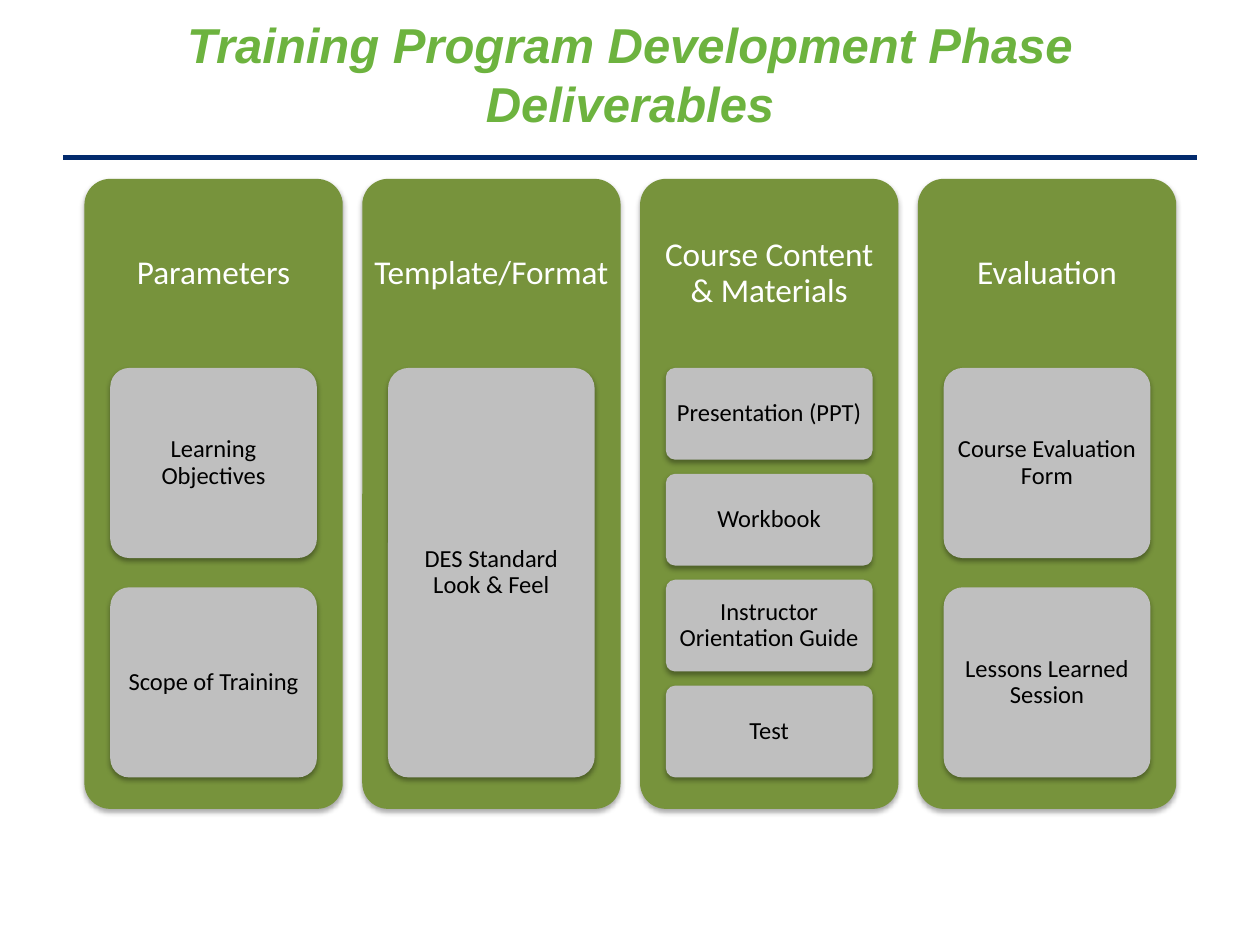
from lxml import etree
from pptx import Presentation
from pptx.dml.color import RGBColor
from pptx.enum.shapes import MSO_CONNECTOR, MSO_SHAPE
from pptx.enum.text import MSO_ANCHOR, PP_ALIGN
from pptx.oxml import parse_xml
from pptx.oxml.ns import nsdecls, qn
from pptx.util import Inches, Pt


def color(hex_string):
    return RGBColor.from_string(hex_string)


def add_box(left, top, width, height, fill, text, size, text_color, insets):
    """Add a shadowed rounded rectangle; insets run left, top, right, bottom."""
    shape = slide.shapes.add_shape(
        MSO_SHAPE.ROUNDED_RECTANGLE,
        Inches(left), Inches(top), Inches(width), Inches(height))
    shape.adjustments[0] = 0.1
    shape.fill.solid()
    shape.fill.fore_color.rgb = color(fill)
    shape.line.fill.background()
    shape.shadow.inherit = False
    effects = shape.element.spPr.find(qn("a:effectLst"))
    effects.append(parse_xml(
        f'<a:outerShdw {nsdecls("a")} blurRad="{Pt(3.1)}" dist="{Pt(1.8)}" '
        'dir="5400000" rotWithShape="0"><a:srgbClr val="000000">'
        '<a:alpha val="35000"/></a:srgbClr></a:outerShdw>'))

    frame = shape.text_frame
    frame.word_wrap = True
    frame.vertical_anchor = MSO_ANCHOR.MIDDLE
    (frame.margin_left, frame.margin_top,
     frame.margin_right, frame.margin_bottom) = [Inches(inset) for inset in insets]
    paragraph = frame.paragraphs[0]
    paragraph.text = text
    paragraph.alignment = PP_ALIGN.CENTER
    paragraph.line_spacing = 0.9
    paragraph.font.name = "Calibri"
    paragraph.font.size = Pt(size)
    paragraph.font.color.rgb = color(text_color)


presentation = Presentation()
presentation.slide_width = Inches(10)
presentation.slide_height = Inches(7.5)
slide = presentation.slides.add_slide(presentation.slide_layouts[5])

# Title
title = slide.shapes.title
title.left, title.top = Inches(0.5), Inches(0.08)
title.width, title.height = Inches(9), Inches(1)
title.text_frame.text = "Training Program Development Phase\vDeliverables"
title.text_frame.vertical_anchor = MSO_ANCHOR.MIDDLE
paragraph = title.text_frame.paragraphs[0]
paragraph.alignment = PP_ALIGN.CENTER
paragraph.font.name = "Arial"
paragraph.font.size = Pt(28)
paragraph.font.bold = True
paragraph.font.italic = True
paragraph.font.color.rgb = color("6DB33F")

# Rule under the title
rule = slide.shapes.add_connector(
    MSO_CONNECTOR.STRAIGHT, Inches(0.5), Inches(1.25), Inches(9.5), Inches(1.25))
rule.line.color.rgb = color("032B6D")
rule.line.width = Pt(3)
etree.SubElement(rule.element.spPr, qn("a:effectLst"))

# Deliverable columns: a panel with a heading, and cards sharing the space below
columns = [
    ("Parameters", ["Learning Objectives", "Scope of Training"]),
    ("Template/Format", ["DES Standard Look & Feel"]),
    ("Course Content & Materials",
     ["Presentation (PPT)", "Workbook", "Instructor Orientation Guide", "Test"]),
    ("Evaluation", ["Course Evaluation Form", "Lessons Learned Session"]),
]
panel_left, panel_top, panel_width, panel_height = 0.67, 1.42, 2.05, 5
panel_pitch = 2.205
heading_height = 0.3 * panel_height
card_width = 0.8 * panel_width
cards_height = 0.65 * panel_height
gap_ratio = 2 / 13  # gap between cards relative to card height

for column, (heading, cards) in enumerate(columns):
    left = panel_left + column * panel_pitch
    add_box(left, panel_top, panel_width, panel_height, "77933C",
            heading, 19, "FFFFFF",
            (0.02, 0.02, 0.02, panel_height - heading_height + 0.02))

    card_left = left + (panel_width - card_width) / 2
    card_height = cards_height / (len(cards) + gap_ratio * (len(cards) - 1))
    for row, text in enumerate(cards):
        card_top = panel_top + heading_height + row * card_height * (1 + gap_ratio)
        add_box(card_left, card_top, card_width, card_height, "BFBFBF",
                text, 14, "000000", (0.04, 0.03, 0.04, 0.03))

presentation.save("out.pptx")
